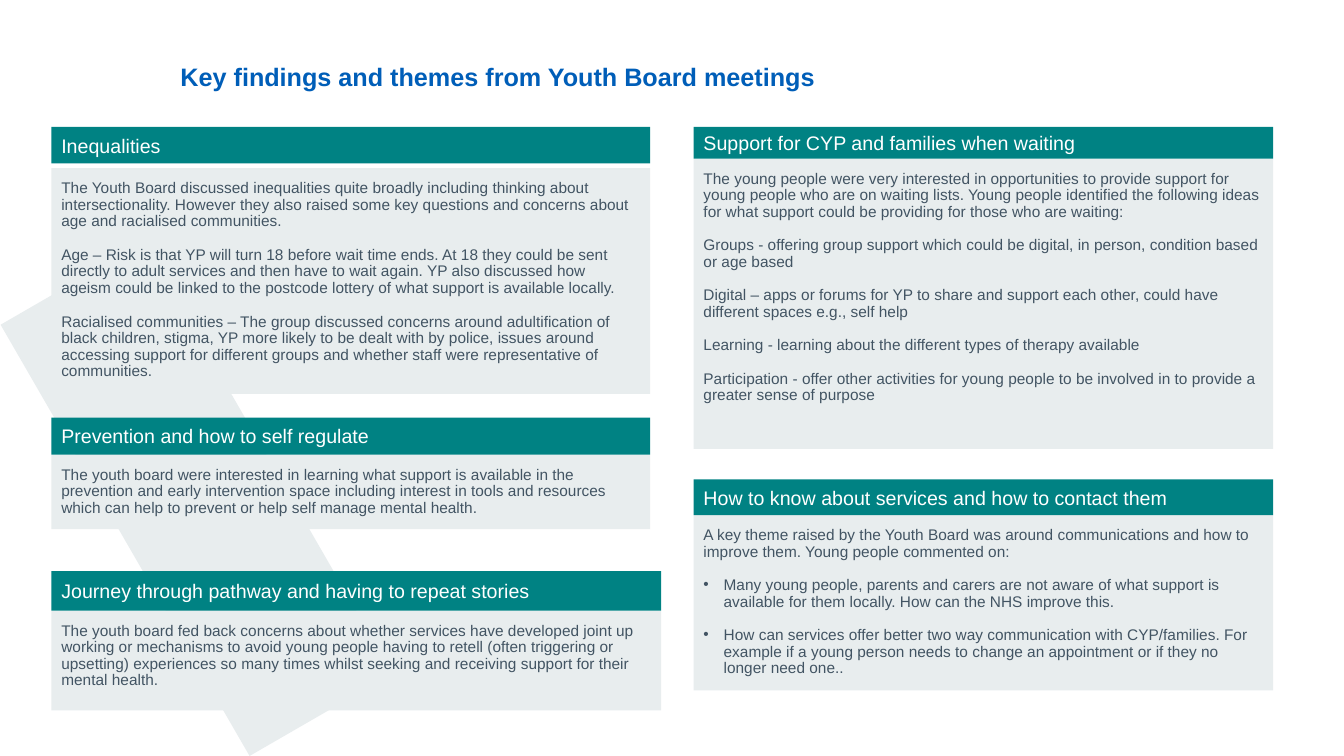
from lxml.etree import SubElement
from pptx import Presentation
from pptx.dml.color import RGBColor
from pptx.enum.shapes import MSO_SHAPE
from pptx.enum.text import MSO_ANCHOR, PP_ALIGN
from pptx.oxml.ns import qn
from pptx.util import Pt

BLUE = RGBColor(0x00, 0x5E, 0xB8)
TEAL = RGBColor(0x00, 0x82, 0x83)
PALE = RGBColor(0xE8, 0xED, 0xEE)
SLATE = RGBColor(0x42, 0x54, 0x63)
WHITE = RGBColor(0xFF, 0xFF, 0xFF)
FONT = "Arial"
LEFT_COLUMN = 36.7
RIGHT_COLUMN = 495.4
RIGHT_WIDTH = 414
BULLET = "• "

CARDS = [
    ((LEFT_COLUMN, 90.7, 427.7), 26, 3.5, 161.3, "Inequalities", [
        "The Youth Board discussed inequalities quite broadly including thinking about intersectionality. "
        "However they also raised some key questions and concerns about age and racialised communities.",
        "Age – Risk is that YP will turn 18 before wait time ends. At 18 they could be sent directly to adult "
        "services and then have to wait again. YP also discussed how ageism could be linked to the postcode "
        "lottery of what support is available locally.",
        "Racialised communities – The group discussed concerns around adultification of black children, stigma, "
        "YP more likely to be dealt with by police, issues around accessing support for different groups and "
        "whether staff were representative of communities.",
    ]),
    ((LEFT_COLUMN, 298.3, 427.7), 26.5, 0, 53.2, "Prevention and how to self regulate", [
        "The youth board were interested in learning what support is available in the prevention and early "
        "intervention space including interest in tools and resources which can help to prevent or help self "
        "manage mental health.",
    ]),
    ((LEFT_COLUMN, 408, 435.6), 28.2, 0, 71.3, "Journey through pathway and having to repeat stories", [
        "The youth board fed back concerns about whether services have developed joint up working or mechanisms "
        "to avoid young people having to retell (often triggering or upsetting) experiences so many times whilst "
        "seeking and receiving support for their mental health.",
    ]),
    ((RIGHT_COLUMN, 90.7, RIGHT_WIDTH), 22.6, 0, 207.4, "Support for CYP and families when waiting", [
        "The young people were very interested in opportunities to provide support for young people who are on "
        "waiting lists. Young people identified the following ideas for what support could be providing for "
        "those who are waiting:",
        "Groups - offering group support which could be digital, in person, condition based or age based",
        "Digital – apps or forums for YP to share and support each other, could have different spaces e.g., "
        "self help",
        "Learning - learning about the different types of therapy available",
        "Participation - offer other activities for young people to be involved in to provide a greater sense "
        "of purpose",
    ]),
    ((RIGHT_COLUMN, 342.5, RIGHT_WIDTH), 25.4, 0, 125.3, "How to know about services and how to contact them", [
        "A key theme raised by the Youth Board was around communications and how to improve them. Young people "
        "commented on:",
        BULLET + "Many young people, parents and carers are not aware of what support is available for them "
        "locally. How can the NHS improve this.",
        BULLET + "How can services offer better two way communication with CYP/families. For example if a young "
        "person needs to change an appointment or if they no longer need one..",
    ]),
]


def set_font(paragraph, size, color, bold=False):
    """Format a whole paragraph."""
    font = paragraph.font
    font.name, font.size, font.bold = FONT, Pt(size), bold
    font.color.rgb = color


def add_block(shapes, kind, box, color):
    """Add a plain filled shape in the box (left, top, width, height)."""
    block = shapes.add_shape(kind, *map(Pt, box))
    block.shadow.inherit = False
    block.fill.solid()
    block.fill.fore_color.rgb = color
    block.line.fill.background()
    return block


def add_bullet(paragraph):
    """Give a paragraph a hanging bullet."""
    properties = paragraph._p.get_or_add_pPr()
    properties.set("marL", str(Pt(14.4)))
    properties.set("indent", str(Pt(-14.4)))
    SubElement(properties, qn("a:buFont")).set("typeface", FONT)
    SubElement(properties, qn("a:buChar")).set("char", BULLET.strip())


def fill_body(frame, texts):
    """Write the paragraphs of a card."""
    frame.word_wrap = True
    frame.vertical_anchor = MSO_ANCHOR.TOP
    frame.margin_top = frame.margin_bottom = Pt(8.64)
    for index, text in enumerate(texts):
        paragraph = frame.add_paragraph() if index else frame.paragraphs[0]
        if text.startswith(BULLET):
            add_bullet(paragraph)
        paragraph.text = text.removeprefix(BULLET)
        paragraph.alignment = PP_ALIGN.LEFT
        paragraph.line_spacing = 0.9
        paragraph.space_after = Pt(12)
        set_font(paragraph, 11, SLATE)


def add_card(slide, place, header_height, gap, body_height, heading, texts):
    """Add a grouped heading bar and text panel at (left, top, width)."""
    left, top, width = place
    shapes = slide.shapes.add_group_shape().shapes
    body_top = top + header_height + gap
    body = add_block(shapes, MSO_SHAPE.RECTANGLE, (left, body_top, width, body_height), PALE)
    fill_body(body.text_frame, texts)
    header = add_block(shapes, MSO_SHAPE.ROUNDED_RECTANGLE, (left, top, width, header_height), TEAL)
    header.adjustments[0] = 0
    frame = header.text_frame
    frame.word_wrap = True
    frame.vertical_anchor = MSO_ANCHOR.MIDDLE
    paragraph = frame.paragraphs[0]
    paragraph.text = heading
    paragraph.alignment = PP_ALIGN.LEFT
    set_font(paragraph, 14, WHITE)


def add_title(slide, box):
    """Place and format the title in the box."""
    title = slide.shapes.title
    title.left, title.top, title.width, title.height = map(Pt, box)
    frame = title.text_frame
    frame.word_wrap = True
    frame.vertical_anchor = MSO_ANCHOR.TOP
    paragraph = frame.paragraphs[0]
    paragraph.text = "Key findings and themes from Youth Board meetings"
    paragraph.alignment = PP_ALIGN.LEFT
    paragraph.line_spacing = 0.9
    set_font(paragraph, 18, BLUE, bold=True)


def add_band(slide, box):
    """Add the slanted background band."""
    band = add_block(slide.shapes, MSO_SHAPE.RECTANGLE, box, PALE)
    band.rotation = 150


def main():
    """Build and save the slide."""
    presentation = Presentation()
    presentation.slide_width, presentation.slide_height = Pt(960), Pt(540)
    slide = presentation.slides.add_slide(presentation.slide_layouts[5])
    add_band(slide, (81.4, 178.6, 118, 355.7))
    add_title(slide, (121.7, 42.5, 527, 57.6))
    for card in CARDS:
        add_card(slide, *card)
    presentation.save("out.pptx")


if __name__ == "__main__":
    main()
